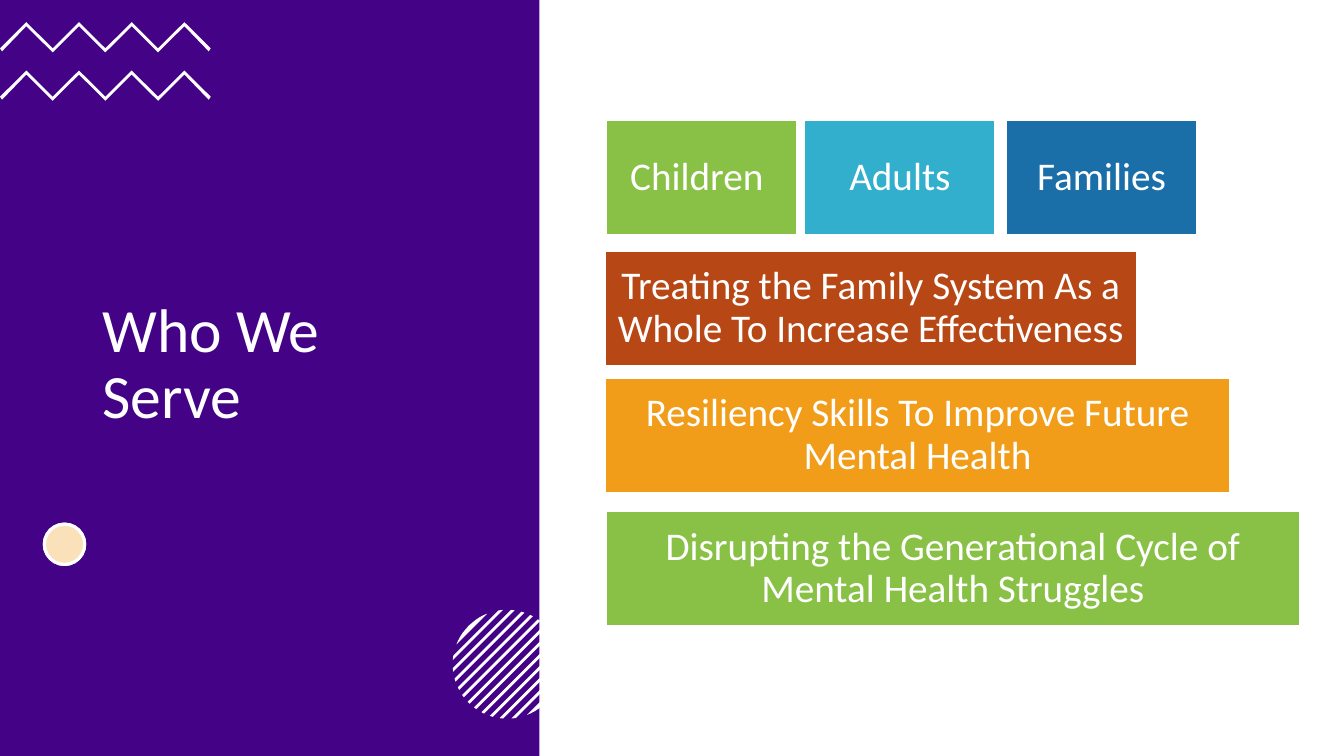
from math import sqrt

from lxml.etree import SubElement
from pptx import Presentation
from pptx.dml.color import RGBColor
from pptx.enum.shapes import MSO_SHAPE
from pptx.enum.text import MSO_ANCHOR, PP_ALIGN
from pptx.oxml.ns import qn
from pptx.util import Inches, Pt

COLORS = {
    "white": "FFFFFF",
    "purple": "440287",
    "green": "88C145",
    "teal": "33AFCE",
    "blue": "1A6FA9",
    "rust": "B74816",
    "orange": "F19D19",
}
CARD_HEIGHT = 1.14
# Left, top, width, fill, text
CARDS = [
    (6.01, 1.19, 1.89, "green", "Children "),
    (7.98, 1.19, 1.89, "teal", "Adults"),
    (9.98, 1.19, 1.89, "blue", "Families"),
    (6, 2.49, 5.27, "rust",
     "Treating the Family System As a Whole To Increase Effectiveness "),
    (6, 3.75, 6.2, "orange", "Resiliency Skills To Improve Future Mental Health"),
    (6.01, 5.07, 6.88, "green",
     "Disrupting the Generational Cycle of Mental Health Struggles"),
]


def rgb(name):
    return RGBColor.from_string(COLORS[name])


def style_shape(shape, fill, line_width=0):
    shape.shadow.inherit = False
    shape.fill.solid()
    shape.fill.fore_color.rgb = rgb(fill)
    if line_width:
        shape.line.color.rgb = rgb("white")
        shape.line.width = Pt(line_width)
    else:
        shape.line.fill.background()


def add_block(page, kind, left, top, width, height, fill, line_width=0):
    shape = page.shapes.add_shape(
        kind, Inches(left), Inches(top), Inches(width), Inches(height))
    style_shape(shape, fill, line_width)
    return shape


def write_text(shape, text, size, align=PP_ALIGN.LEFT, inset_x=0.1, inset_y=0.05):
    frame = shape.text_frame
    frame.word_wrap = True
    frame.vertical_anchor = MSO_ANCHOR.MIDDLE
    frame.margin_left = frame.margin_right = Inches(inset_x)
    frame.margin_top = frame.margin_bottom = Inches(inset_y)
    para = frame.paragraphs[0]
    para.alignment = align
    para.line_spacing = 0.9
    span = para.add_run()
    span.text = text
    span.font.name = "Calibri"
    span.font.size = Pt(size)
    span.font.color.rgb = rgb("white")


def add_outline(group, points, fill):
    corners = [(Inches(x), Inches(y)) for x, y in points]
    builder = group.shapes.build_freeform(*corners[0])
    builder.add_line_segments(corners[1:], close=True)
    style_shape(builder.convert_to_shape(), fill)


def add_zigzag(group, top, width=2.09, rise=0.26, thickness=0.04):
    step = width / 8
    upper = [(i * step, top + (0 if i % 2 else rise)) for i in range(9)]
    lower = [(x, y + thickness) for x, y in reversed(upper[1:-1])]
    tip_y = top + rise + 0.03
    add_outline(group, upper + [(width - 0.02, tip_y)] + lower + [(0.02, tip_y)],
                "white")


def add_striped_circle(group, center_x, center_y, radius, step=0.12, band=0.04):
    """Diagonal bands where x + y is constant, cut off by the circle."""
    limit = radius * sqrt(2)
    for k in range(-6, 7):
        low = -limit if k == -6 else k * step - band / 2
        high = limit if k == 6 else k * step + band / 2
        upper_ends, lower_ends = [], []
        for i in range(7):
            total = low + (high - low) * i / 6
            reach = sqrt(max(0, 2 * radius ** 2 - total ** 2)) / 2
            middle_x, middle_y = center_x + total / 2, center_y + total / 2
            upper_ends.append((middle_x + reach, middle_y - reach))
            lower_ends.append((middle_x - reach, middle_y + reach))
        add_outline(group, upper_ends + lower_ends[::-1], "white")


def add_dot(page):
    place = (0.44, 5.2, 0.4, 0.4)
    add_block(page, MSO_SHAPE.OVAL, *place, "white", 2.25)
    tint = add_block(page, MSO_SHAPE.OVAL, *place, "orange", 2.25)
    color = tint.fill._xPr.find(qn("a:solidFill"))[0]
    SubElement(color, qn("a:alpha"), val="30000")


def main():
    deck = Presentation()
    deck.slide_width, deck.slide_height = Inches(13.33), Inches(7.5)
    page = deck.slides.add_slide(deck.slide_layouts[6])

    # Side panel and title
    add_block(page, MSO_SHAPE.RECTANGLE, 0, 0, 5.35, 7.5, "purple")
    title = page.shapes.add_textbox(
        Inches(0.92), Inches(1.31), Inches(3.5), Inches(4.63))
    write_text(title, "Who We Serve", 44)

    # Panel ornaments
    zigzags = page.shapes.add_group_shape()
    for top in (0.22, 0.7):
        add_zigzag(zigzags, top)
    add_dot(page)
    add_striped_circle(page.shapes.add_group_shape(), 5.03, 6.59, 0.54)

    # Cards
    for left, top, width, fill, text in CARDS:
        card = add_block(page, MSO_SHAPE.RECTANGLE, left, top, width, CARD_HEIGHT,
                         fill, 1)
        write_text(card, text, 28, align=PP_ALIGN.CENTER, inset_x=0.12, inset_y=0.12)

    deck.save("out.pptx")


if __name__ == "__main__":
    main()
